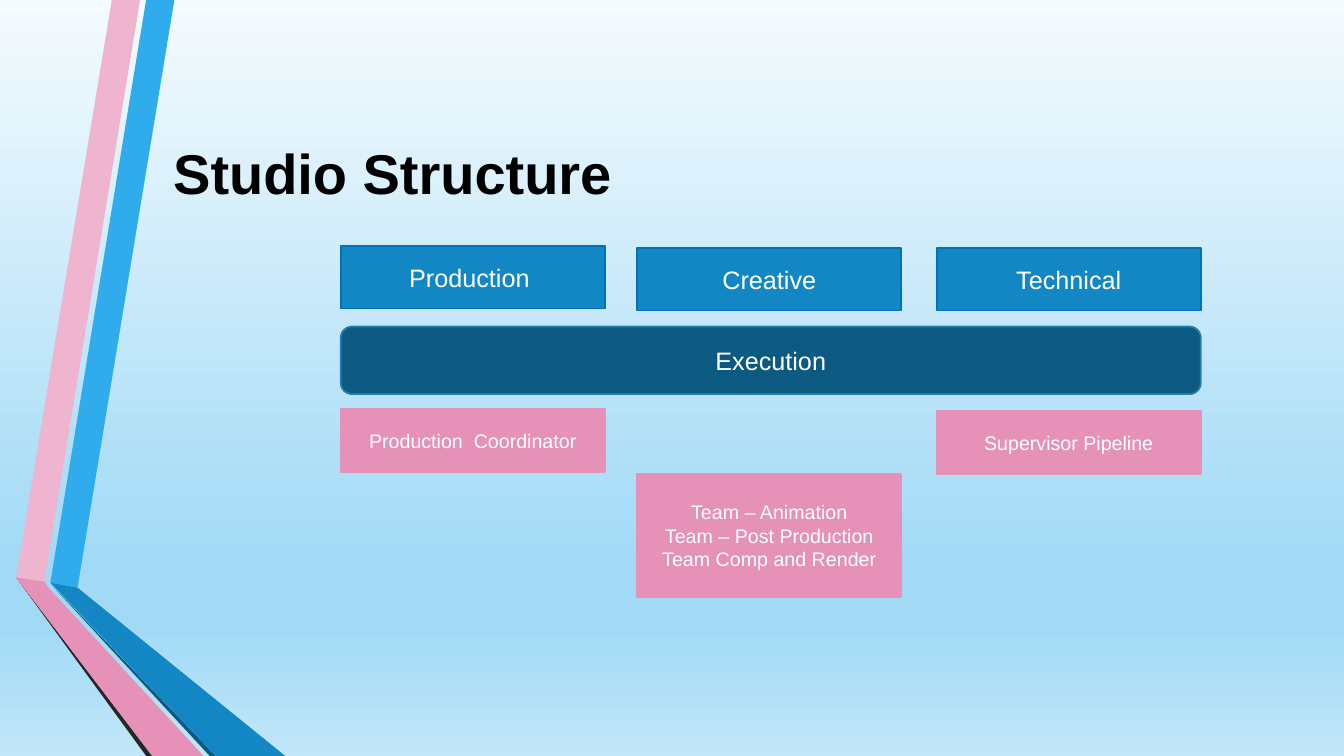
from dataclasses import dataclass
from lxml.etree import SubElement
from pptx import Presentation
from pptx.dml.color import RGBColor
from pptx.enum.shapes import MSO_SHAPE
from pptx.enum.text import MSO_ANCHOR, PP_ALIGN
from pptx.oxml.ns import qn
from pptx.shapes.autoshape import Shape
from pptx.slide import Slide
from pptx.text.text import TextFrame
from pptx.util import Inches, Pt

COLORS = {
    "black": "000000",
    "white": "FFFFFF",
    "coal": "262626",
    "sky": "30ACEC",
    "blue": "1287C3",
    "edge": "0070C0",
    "navy": "0C5A82",
    "teal": "247FAF",
    "blush": "EFB5CF",
    "pink": "E691B7",
    "pale": "F5FBFE",
    "mid": "A2DAF6",
    "low": "C1E6F9",
}
FADE = ((0, "pale"), (74, "mid"), (83, "mid"), (100, "low"))
FONT = "Arial"
LEFT, CENTER, RIGHT = 3.38, 6.32, 9.29
WIDTH, HEIGHT = 2.62, 0.62


@dataclass
class Band:
    color: str
    points: tuple[tuple[float, float], ...]


@dataclass
class Box:
    text: str
    left: float
    top: float
    fill: str = "blue"
    line: str = "edge"
    size: int = 18
    width: float = WIDTH
    height: float = HEIGHT
    kind: MSO_SHAPE = MSO_SHAPE.RECTANGLE


@dataclass
class Role(Box):
    fill: str = "pink"
    line: str = "pink"
    size: int = 14


BANDS = (
    Band("sky", ((0.5, 5.78), (0.77, 5.83), (1.73, 0), (1.45, 0))),
    Band("blush", ((1.39, 0), (1.11, 0), (0.16, 5.73), (0.44, 5.77))),
    Band("coal", ((0.16, 5.73), (1.45, 7.5), (1.51, 7.5))),
    Band("navy", ((0.5, 5.79), (2.08, 7.5), (2.14, 7.5))),
    Band("blue", ((0.5, 5.78), (2.14, 7.5), (2.83, 7.5), (0.77, 5.83))),
    Band("pink", ((2.02, 7.5), (0.48, 5.83), (0.44, 5.77), (0.16, 5.73), (1.51, 7.5))),
)
BOXES = (
    Box("Creative", CENTER, 2.46),
    Box("Production ", LEFT, 2.44),
    Box("Technical", RIGHT, 2.46),
    Box("Execution", LEFT, 3.24, "navy", "teal", width=RIGHT + WIDTH - LEFT,
        height=0.67, kind=MSO_SHAPE.ROUNDED_RECTANGLE),
    Role("Supervisor Pipeline", RIGHT, 4.08),
    Role("Production  Coordinator", LEFT, 4.06),
    Role("Team – Animation\nTeam – Post Production\nTeam Comp and Render",
         CENTER, 4.7, height=1.22),
)


def rgb(name: str) -> RGBColor:
    return RGBColor.from_string(COLORS[name])


def paint(shape: Shape, color: str) -> None:
    shape.shadow.inherit = False
    shape.fill.solid()
    shape.fill.fore_color.rgb = rgb(color)


def write(frame: TextFrame, text: str, size: int, color: str,
          align: PP_ALIGN, bold: bool = False) -> None:
    frame.word_wrap = True
    frame.vertical_anchor = MSO_ANCHOR.MIDDLE
    frame.text = text
    for para in frame.paragraphs:
        para.alignment = align
        para.font.name = FONT
        para.font.size = Pt(size)
        para.font.bold = bold
        para.font.color.rgb = rgb(color)


def shade(slide: Slide) -> None:
    fill = slide.background.fill
    fill.gradient()
    fill.gradient_angle = 270
    stops = slide.element.find(".//" + qn("a:gsLst"))
    for stop in list(stops):
        stops.remove(stop)
    for place, color in FADE:
        stop = SubElement(stops, qn("a:gs"), pos=str(place * 1000))
        SubElement(stop, qn("a:srgbClr"), val=COLORS[color])


def draw_band(slide: Slide, band: Band) -> None:
    start, *rest = [(Inches(x), Inches(y)) for x, y in band.points]
    path = slide.shapes.build_freeform(*start)
    path.add_line_segments(rest, close=True)
    shape = path.convert_to_shape()
    paint(shape, band.color)
    shape.line.fill.background()


def draw_box(slide: Slide, box: Box) -> None:
    shape = slide.shapes.add_shape(
        box.kind, Inches(box.left), Inches(box.top),
        Inches(box.width), Inches(box.height))
    paint(shape, box.fill)
    shape.line.color.rgb = rgb(box.line)
    shape.line.width = Pt(1.25)
    write(shape.text_frame, box.text, box.size, "white", PP_ALIGN.CENTER)


def main() -> None:
    deck = Presentation()
    deck.slide_width = Inches(13.33)
    deck.slide_height = Inches(7.5)
    slide = deck.slides.add_slide(deck.slide_layouts[6])
    shade(slide)
    for band in BANDS:
        draw_band(slide, band)
    title = slide.shapes.add_textbox(
        Inches(1.62), Inches(0.75), Inches(10.96), Inches(1.92))
    write(title.text_frame, "Studio Structure", 40, "black", PP_ALIGN.LEFT, True)
    for box in BOXES:
        draw_box(slide, box)
    deck.save("out.pptx")


if __name__ == "__main__":
    main()
